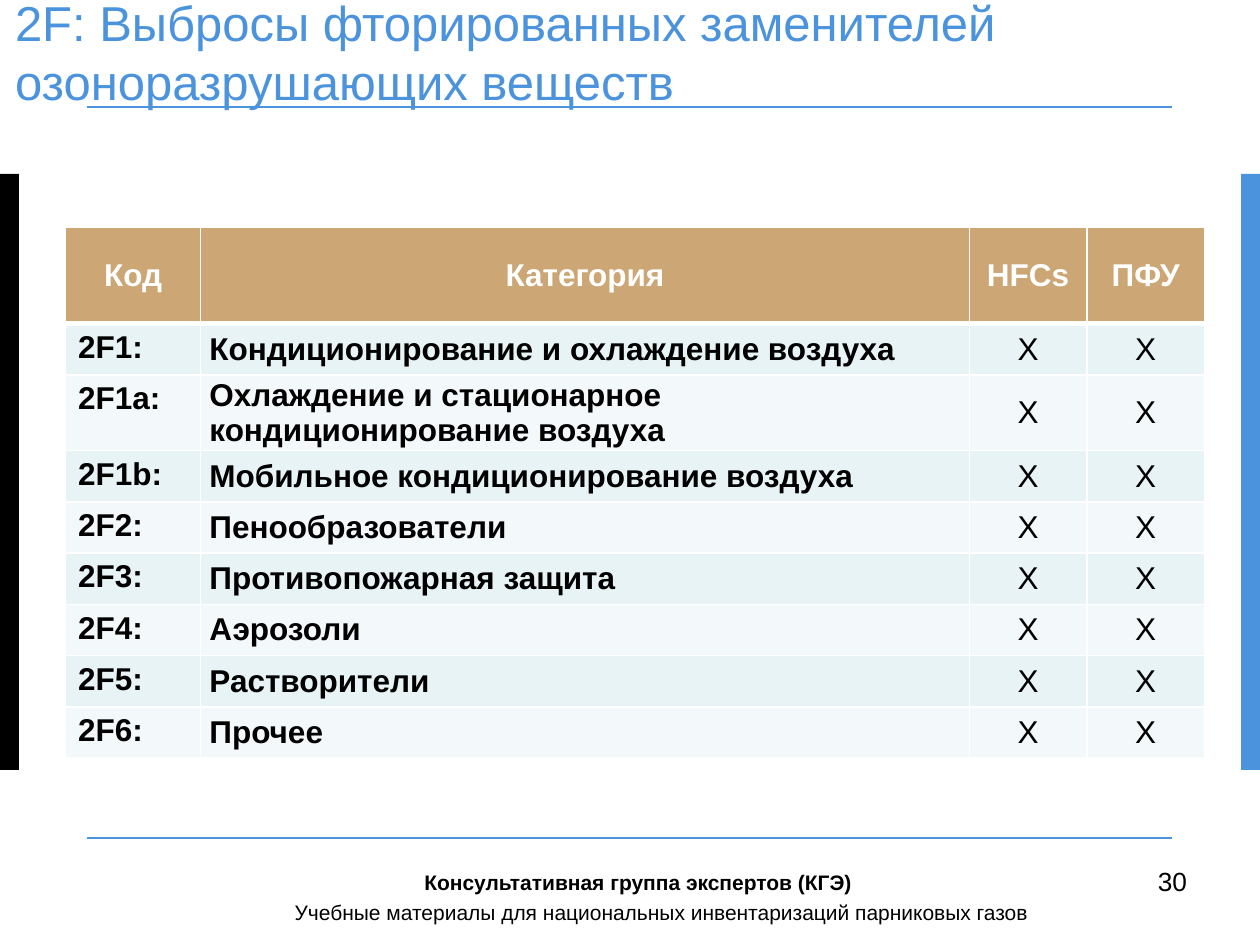
from lxml import etree
from pptx import Presentation
from pptx.dml.color import RGBColor
from pptx.enum.shapes import MSO_CONNECTOR, MSO_SHAPE
from pptx.enum.text import MSO_ANCHOR, PP_ALIGN
from pptx.oxml.ns import qn
from pptx.util import Pt

RECT, LINE = MSO_SHAPE.RECTANGLE, MSO_CONNECTOR.STRAIGHT
TOP, MIDDLE = MSO_ANCHOR.TOP, MSO_ANCHOR.MIDDLE
LEFT, CENTER = PP_ALIGN.LEFT, PP_ALIGN.CENTER
BLACK = RGBColor(0x00, 0x00, 0x00)
WHITE = RGBColor(0xFF, 0xFF, 0xFF)
BLUE = RGBColor(0x4B, 0x93, 0xDC)
TAN = RGBColor(0xCC, 0xA6, 0x74)
BANDS = [RGBColor(0xF3, 0xF9, 0xFA), RGBColor(0xE7, 0xF3, 0xF4)]


def write(tf, text, size, color, bold=False, align=LEFT):
    tf.text = text
    p = tf.paragraphs[0]
    p.alignment = align
    p.font.name, p.font.size, p.font.bold = "Arial", Pt(size), bold
    p.font.color.rgb = color


def set_border(cell, side, width):
    ln = etree.SubElement(cell._tc.get_or_add_tcPr(), qn("a:" + side), w=str(Pt(width)))
    fill = etree.SubElement(ln, qn("a:solidFill"))
    etree.SubElement(fill, qn("a:srgbClr"), val=str(WHITE))


prs = Presentation()
prs.slide_width, prs.slide_height = Pt(720), Pt(540)
s = prs.slides.add_slide(prs.slide_layouts[6])

# Side bars
for x, color in [(0, BLACK), (709.2, BLUE)]:
    sp = s.shapes.add_shape(RECT, Pt(x), Pt(99.4), Pt(10.8), Pt(340.6))
    sp.shadow.inherit = False
    sp.fill.solid()
    sp.fill.fore_color.rgb = color
    sp.line.fill.background()

# Rules under the title and above the footer
for y in (61.2, 478.8):
    rule = s.shapes.add_connector(LINE, Pt(49.7), Pt(y), Pt(669.6), Pt(y))
    rule.line.color.rgb = BLUE
    rule.line.width = Pt(1)
    etree.SubElement(rule._element.spPr, qn("a:effectLst"))

# Title
tf = s.shapes.add_textbox(Pt(8.6), Pt(3.6), Pt(711.4), Pt(51.1)).text_frame
tf.word_wrap = True
tf.vertical_anchor = MIDDLE
tf.margin_left = tf.margin_top = tf.margin_right = tf.margin_bottom = 0
write(tf, "2F: Выбросы фторированных заменителей\vозоноразрушающих веществ", 28, BLUE)

# Table of categories
HEADER = ["Код", "Категория", "HFCs", "ПФУ"]
CATEGORIES = [
    ("2F1:", "Кондиционирование и охлаждение воздуха"),
    ("2F1a:", "Охлаждение и стационарное кондиционирование воздуха"),
    ("2F1b:", "Мобильное кондиционирование воздуха"),
    ("2F2:", "Пенообразователи"),
    ("2F3:", "Противопожарная защита"),
    ("2F4:", "Аэрозоли"),
    ("2F5:", "Растворители"),
    ("2F6:", "Прочее"),
]
rows = [HEADER] + [[code, name, "X", "X"] for code, name in CATEGORIES]
widths = [77.2, 439.2, 67.2, 67.2]
heights = [55.4, 29.3, 40.5] + [29.3] * 6
table = s.shapes.add_table(len(rows), len(widths), Pt(37.5), Pt(129.6),
                           Pt(sum(widths)), Pt(sum(heights))).table
for column, width in zip(table.columns, widths):
    column.width = Pt(width)
for i, row in enumerate(rows):
    table.rows[i].height = Pt(heights[i])
    for j, text in enumerate(row):
        cell = table.cell(i, j)
        header = i == 0
        cell.vertical_anchor = TOP if j == 0 and not header else MIDDLE
        if j > 0 and not header:
            cell.margin_left = cell.margin_right = Pt(5)
            cell.margin_top = cell.margin_bottom = 0
        write(cell.text_frame, text, 18, WHITE if header else BLACK,
              bold=header or j < 2, align=CENTER if header or j > 1 else LEFT)
        for side in ("lnL", "lnR"):
            set_border(cell, side, 1)
        set_border(cell, "lnT", 3 if i == 1 else 1)
        set_border(cell, "lnB", 3 if header else 1)
        cell.fill.solid()
        cell.fill.fore_color.rgb = TAN if header else BANDS[i % 2]

# Footer and slide number
for x, y, w, h, text, size, bold in [
    (654.5, 491, 40, 25, "30", 15, False),
    (161.3, 510.5, 458, 20,
     "Учебные материалы для национальных инвентаризаций парниковых газов", 12, False),
    (235.4, 493.2, 266.4, 20, "Консультативная группа экспертов (КГЭ)", 12, True),
]:
    tf = s.shapes.add_textbox(Pt(x), Pt(y), Pt(w), Pt(h)).text_frame
    tf.word_wrap = True
    write(tf, text, size, BLACK, bold)

prs.save("out.pptx")
